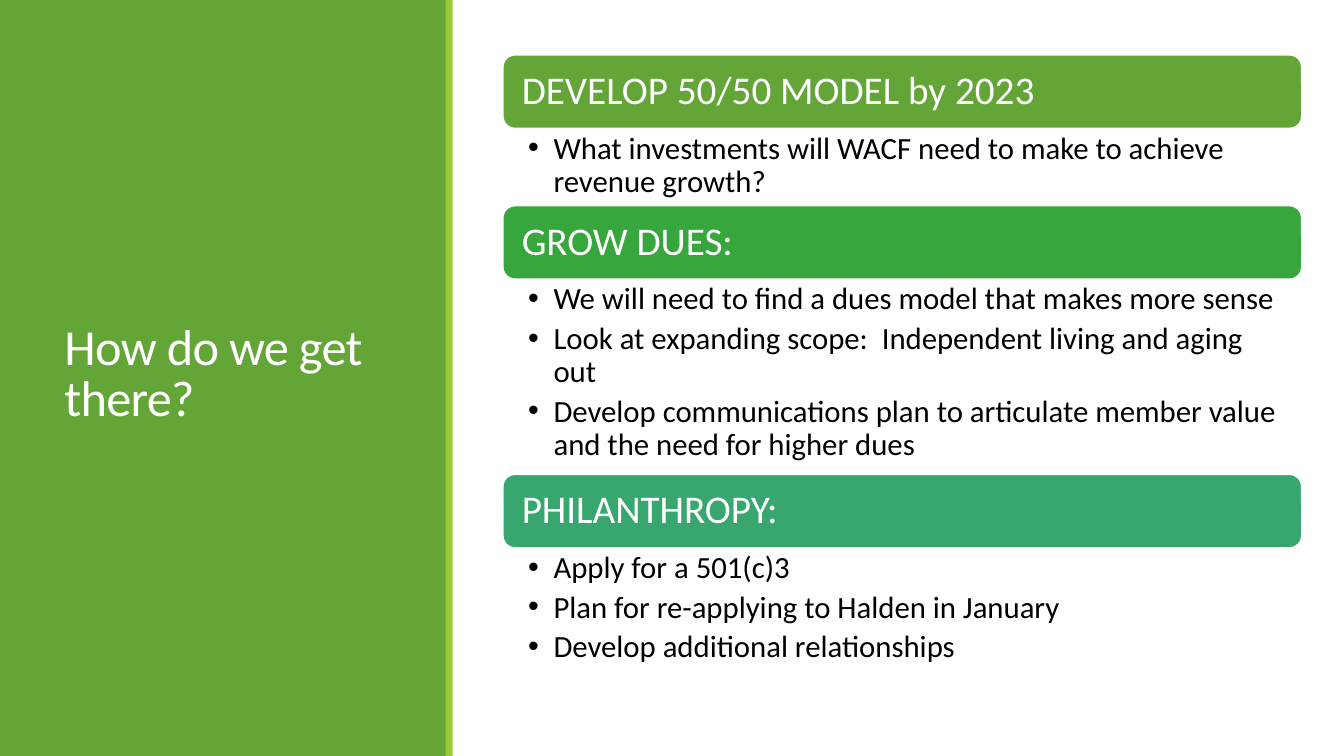
from lxml.etree import SubElement
from pptx import Presentation
from pptx.dml.color import RGBColor
from pptx.enum.shapes import MSO_SHAPE as SHAPE
from pptx.enum.text import MSO_ANCHOR as ANCHOR, MSO_AUTO_SIZE as FIT, PP_ALIGN as ALIGN
from pptx.oxml.ns import qn
from pptx.util import Cm, Pt

TITLE = "How do we get there?"
SECTIONS = [
    ("DEVELOP 50/50 MODEL by 2023", "green", 1.94, [
        "What investments will WACF need to make to achieve revenue growth?",
    ]),
    ("GROW DUES:", "emerald", 4.91, [
        "We will need to find a dues model that makes more sense",
        "Look at expanding scope:  Independent living and aging out",
        "Develop communications plan to articulate member value and the need for higher dues",
    ]),
    ("PHILANTHROPY:", "teal", 3.15, [
        "Apply for a 501(c)3",
        "Plan for re-applying to Halden in January",
        "Develop additional relationships",
    ]),
]
COLORS = {
    "green": "63A537", "lime": "99CB38", "emerald": "37A63D",
    "teal": "37A76F", "white": "FFFFFF", "black": "000000",
}
SLIDE_W, SLIDE_H = 33.87, 19.05
LEFT, TOP, WIDTH, HEADER_H = 12.67, 1.38, 20.14, 1.86
INDENT = 0.64
TITLE_BOX = (1.37, 1.45, 8.56, 16.03)
TITLE_FRAME = {"vertical_anchor": ANCHOR.MIDDLE}
HEADER_FRAME = {"vertical_anchor": ANCHOR.MIDDLE, "margin_left": Cm(0.39)}
LIST_FRAME = {
    "vertical_anchor": ANCHOR.TOP, "margin_left": Cm(0.64), "margin_right": Cm(0.56),
    "margin_top": Cm(0.1), "margin_bottom": Cm(0.1),
}
TITLE_PARA = {"line_spacing": 0.85}
HEADER_PARA = {"line_spacing": 0.9}
LIST_PARA = {"line_spacing": 0.9, "space_before": Pt(0), "space_after": Pt(4.4)}


def rgb(name):
    return RGBColor.from_string(COLORS[name])


def set_all(obj, values):
    for name, value in values.items():
        setattr(obj, name, value)


def place(sp, x, y, w, h):
    set_all(sp, {"left": Cm(x), "top": Cm(y), "width": Cm(w), "height": Cm(h)})


def add_box(s, kind, box, color):
    sp = s.shapes.add_shape(kind, *map(Cm, box))
    sp.shadow.inherit = False
    sp.fill.solid()
    sp.fill.fore_color.rgb = rgb(color)
    sp.line.fill.background()
    return sp


def add_bullet(p):
    pPr = p._p.get_or_add_pPr()
    pPr.set("marL", str(Cm(INDENT)))
    pPr.set("indent", str(-Cm(INDENT)))
    SubElement(pPr, qn("a:buFont")).set("typeface", "Arial")
    SubElement(pPr, qn("a:buChar")).set("char", "•")


def write(sp, lines, size, color, frame, para, bullets=False):
    tf = sp.text_frame
    set_all(tf, {"word_wrap": True, "auto_size": FIT.NONE, **frame})
    for i, line in enumerate(lines):
        p = tf.add_paragraph() if i else tf.paragraphs[0]
        if bullets:
            add_bullet(p)
        set_all(p, {"alignment": ALIGN.LEFT, **para})
        r = p.add_run()
        r.text = line
        set_all(r.font, {"name": "Calibri", "size": Pt(size), "bold": False})
        r.font.color.rgb = rgb(color)


def main():
    prs = Presentation()
    prs.slide_width, prs.slide_height = Cm(SLIDE_W), Cm(SLIDE_H)
    s = prs.slides.add_slide(prs.slide_layouts.get_by_name("Comparison"))
    title, *bodies = s.placeholders

    add_box(s, SHAPE.RECTANGLE, (0, 0, 11.25, SLIDE_H), "green")
    add_box(s, SHAPE.RECTANGLE, (11.23, 0, 0.18, SLIDE_H), "lime")
    s.shapes._spTree.append(title._element)
    place(title, *TITLE_BOX)
    write(title, [TITLE], 36, "white", TITLE_FRAME, TITLE_PARA)
    title.text_frame.paragraphs[0].runs[0]._r.get_or_add_rPr().set("spc", "-50")

    y = TOP
    for body, (heading, color, list_h, items) in zip(bodies, SECTIONS):
        header = add_box(s, SHAPE.ROUNDED_RECTANGLE, (LEFT, y, WIDTH, HEADER_H), color)
        header.line.color.rgb = rgb("white")
        header.line.width = Pt(1.25)
        write(header, [heading], 28, "white", HEADER_FRAME, HEADER_PARA)
        y += HEADER_H
        place(body, LEFT, y, WIDTH, list_h)
        write(body, items, 22, "black", LIST_FRAME, LIST_PARA, bullets=True)
        y += list_h

    for spare in bodies[len(SECTIONS):]:
        spare._element.getparent().remove(spare._element)
    prs.save("out.pptx")


if __name__ == "__main__":
    main()
